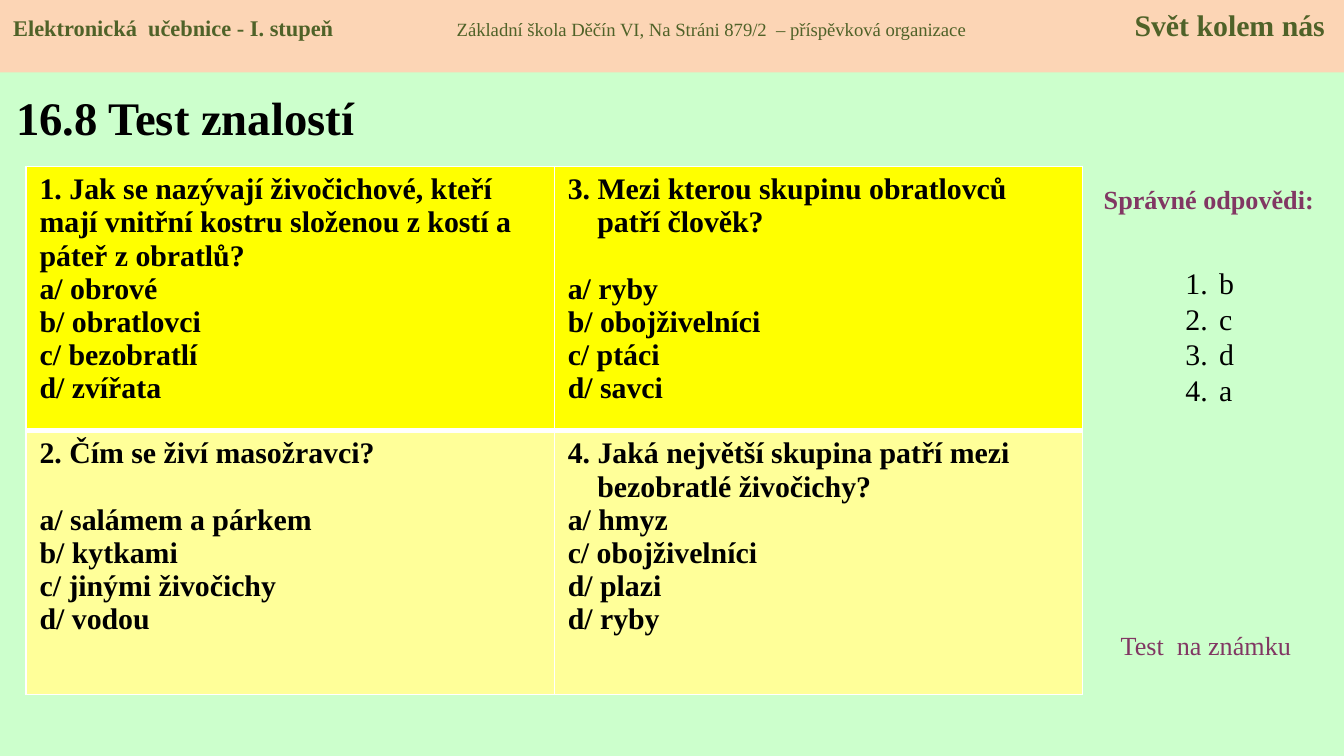
from dataclasses import dataclass

from lxml.etree import SubElement
from pptx import Presentation
from pptx.dml.color import RGBColor
from pptx.enum.shapes import MSO_SHAPE as Shape
from pptx.enum.text import MSO_ANCHOR as Anchor, MSO_AUTO_SIZE as AutoSize, PP_ALIGN as Align
from pptx.oxml.ns import qn
from pptx.util import Inches, Pt

WIDTH = Inches(10)
HEIGHT = WIDTH * 9 // 16
FONT = "Times New Roman"
BLACK, WHITE, GREEN, PURPLE = "000000", "FFFFFF", "4F6228", "813763"
LINE = Pt(17.7)  # height of one line of 16 pt text
HANG = Inches(0.22)  # question text starts after its number


@dataclass
class Box:
    """A place on the slide, in percent of its width and height."""
    left: float
    top: float
    width: float
    height: float

    def lengths(self) -> tuple:
        return (int(WIDTH * self.left / 100), int(HEIGHT * self.top / 100),
                int(WIDTH * self.width / 100), int(HEIGHT * self.height / 100))


@dataclass
class Question:
    lines: list
    answers: list
    gap: bool = False  # one free line before the answers


@dataclass
class Label:
    text: str
    box: Box
    bold: bool
    align: Align


QUESTIONS = [
    [Question(["1. Jak se nazývají živočichové, kteří mají vnitřní kostru složenou z kostí a páteř z obratlů?"],
              ["a/ obrové", "b/ obratlovci", "c/ bezobratlí", "d/ zvířata"]),
     Question(["3. Mezi kterou skupinu obratlovců", "patří člověk?"],
              ["a/ ryby", "b/ obojživelníci", "c/ ptáci", "d/ savci"], gap=True)],
    [Question(["2. Čím se živí masožravci?"],
              ["a/ salámem a párkem", "b/ kytkami", "c/ jinými živočichy", "d/ vodou"], gap=True),
     Question(["4. Jaká největší skupina patří mezi", "bezobratlé živočichy?"],
              ["a/ hmyz", "c/ obojživelníci", "d/ plazi", "d/ ryby"])],
]
ROW_FILLS = ["FFFF00", "FFFF99"]
ROW_BORDERS = [{"L": 1, "R": 1, "T": 1, "B": 3}, {"L": 1, "R": 1, "T": 3, "B": 1}]
LABELS = [
    Label("Správné odpovědi:", Box(80.5, 23.4, 18.9, 6), True, Align.CENTER),
    Label("Test  na známku", Box(82.4, 82.4, 15.7, 6), False, Align.LEFT),
]
HEADER = [("Elektronická  učebnice - I. stupeň", 12, True),
          ("\tZákladní škola Děčín VI, Na Stráni 879/2  – příspěvková organizace", 10, False),
          ("\tSvět kolem nás", 16, True)]
HEADER_TABS = [(3.3, "l"), (9.76, "r")]


def paint(fill, color: str) -> None:
    fill.solid()
    fill.fore_color.rgb = RGBColor.from_string(color)


def style(font, size: float, color: str = BLACK, bold: bool = False) -> None:
    font.name, font.size, font.bold = FONT, Pt(size), bold
    font.color.rgb = RGBColor.from_string(color)


def place(shape, box: Box) -> None:
    shape.left, shape.top, shape.width, shape.height = box.lengths()


def add_paragraph(frame, index: int, text: str):
    paragraph = frame.add_paragraph() if index else frame.paragraphs[0]
    paragraph.text = text
    return paragraph


def draw_title(slide) -> None:
    title = slide.shapes.title
    place(title, Box(0.2, 9.7, 31.9, 11.6))
    frame = title.text_frame
    frame.auto_size, frame.vertical_anchor = AutoSize.NONE, Anchor.MIDDLE
    paragraph = add_paragraph(frame, 0, "16.8 Test znalostí")
    paragraph.alignment = Align.LEFT
    style(paragraph.font, 25, bold=True)


def draw_label(slide, label: Label) -> None:
    frame = slide.shapes.add_textbox(*label.box.lengths()).text_frame
    frame.word_wrap = True
    paragraph = add_paragraph(frame, 0, label.text)
    paragraph.alignment = label.align
    style(paragraph.font, 14, PURPLE, label.bold)


def fill_cell(cell, question: Question, color: str, borders: dict) -> None:
    properties = cell._tc.get_or_add_tcPr()
    for side, points in borders.items():
        line = SubElement(properties, qn(f"a:ln{side}"), w=str(Pt(points)))
        SubElement(SubElement(line, qn("a:solidFill")), qn("a:srgbClr"), val=WHITE)
    paint(cell.fill, color)
    count = len(question.lines)
    for index, text in enumerate(question.lines + question.answers):
        paragraph = add_paragraph(cell.text_frame, index, text)
        if 0 < index < count:
            paragraph._p.get_or_add_pPr().set("marL", str(HANG))
        if index == count and question.gap:
            paragraph.space_before = LINE
        style(paragraph.font, 16, bold=True)


def draw_questions(slide) -> None:
    box = Box(1.95, 22, 78.6, 69.9)
    table = slide.shapes.add_table(len(QUESTIONS), len(QUESTIONS[0]), *box.lengths()).table
    for row, questions in enumerate(QUESTIONS):
        for column, question in enumerate(questions):
            fill_cell(table.cell(row, column), question, ROW_FILLS[row], ROW_BORDERS[row])


def draw_answers(slide) -> None:
    body = slide.placeholders[1]
    place(body, Box(87.2, 34.1, 5.5, 30.6))
    frame = body.text_frame
    frame.auto_size, frame.vertical_anchor = AutoSize.NONE, Anchor.TOP
    for index, letter in enumerate("bcda"):
        paragraph = add_paragraph(frame, index, letter)
        paragraph.space_before = Pt(0)
        properties = paragraph._p.get_or_add_pPr()
        properties.set("marL", str(Inches(0.25)))
        properties.set("indent", str(-Inches(0.25)))
        SubElement(properties, qn("a:buFont"), typeface="+mj-lt")
        SubElement(properties, qn("a:buAutoNum"), type="arabicPeriod")
        style(paragraph.font, 16)


def draw_header(slide) -> None:
    band = slide.shapes.add_shape(Shape.RECTANGLE, *Box(0, 0, 100, 9.6).lengths())
    band.shadow.inherit = False
    paint(band.fill, "FCD5B5")
    band.line.fill.background()
    band.text_frame.vertical_anchor = Anchor.TOP
    paragraph = band.text_frame.paragraphs[0]
    paragraph.alignment = Align.LEFT
    tabs = SubElement(paragraph._p.get_or_add_pPr(), qn("a:tabLst"))
    for position, align in HEADER_TABS:
        SubElement(tabs, qn("a:tab"), pos=str(Inches(position)), algn=align)
    for text, size, bold in HEADER:
        run = paragraph.add_run()
        run.text = text
        style(run.font, size, GREEN, bold)


def main() -> None:
    presentation = Presentation()
    presentation.slide_width, presentation.slide_height = WIDTH, HEIGHT
    slide = presentation.slides.add_slide(presentation.slide_layouts[1])
    paint(slide.background.fill, "CCFFCC")

    # Title and question grid
    draw_title(slide)
    draw_questions(slide)

    # Answer column
    draw_answers(slide)
    for label in LABELS:
        draw_label(slide, label)

    # Band across the top
    draw_header(slide)
    presentation.save("out.pptx")


if __name__ == "__main__":
    main()
